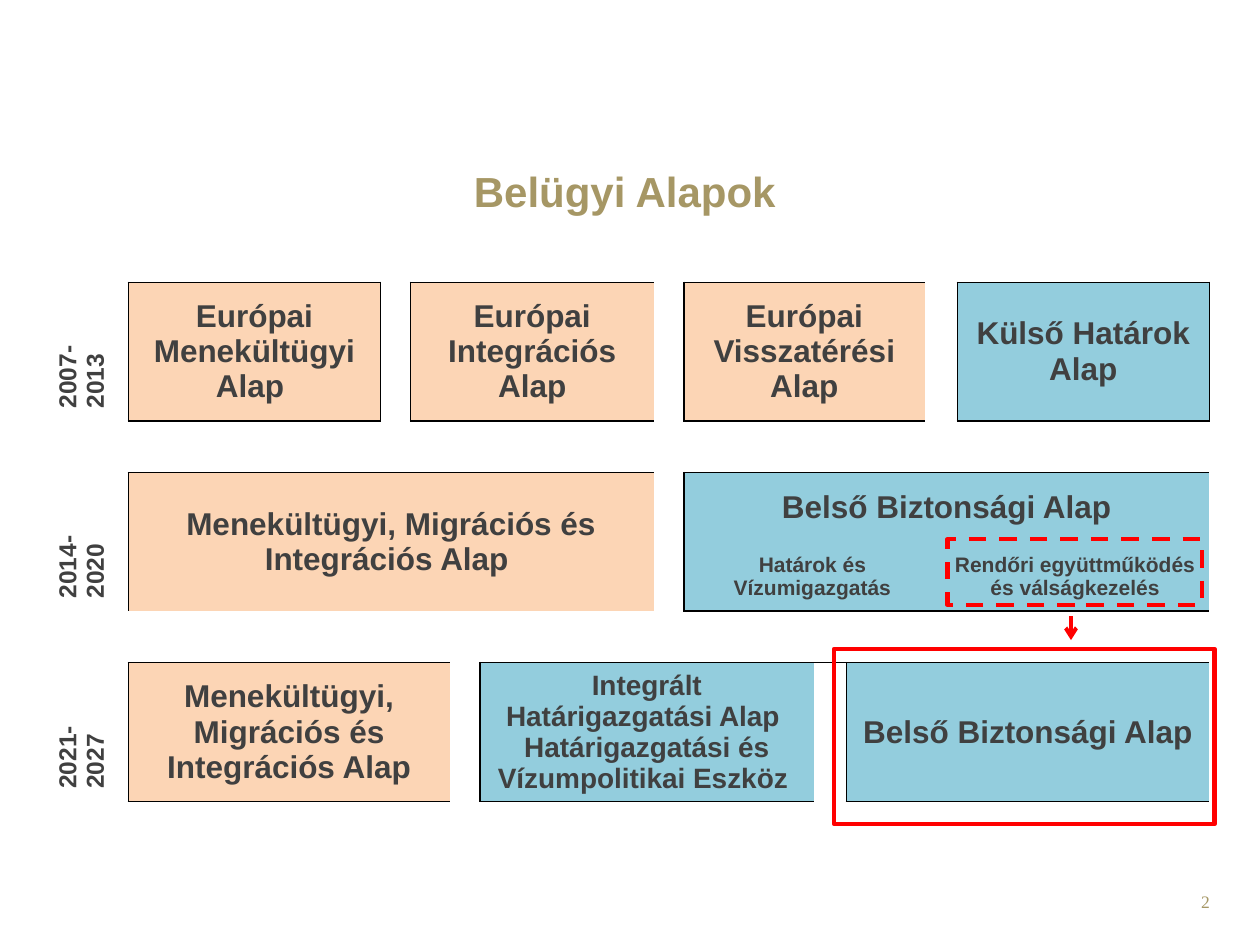
import itertools
import pptx
import pptx.util
import pptx.dml.color
import pptx.enum.dml
import pptx.enum.shapes
import pptx.enum.text
import pptx.oxml
import pptx.oxml.ns

Inches, Pt = pptx.util.Inches, pptx.util.Pt
RGB = pptx.dml.color.RGBColor.from_string
ALIGN, ANCHOR = pptx.enum.text.PP_ALIGN, pptx.enum.text.MSO_ANCHOR
NS = pptx.oxml.ns.nsdecls("a")

THEME = dict(
    font="Arial", number_font="Times New Roman",
    gold="A69765", text="404040", border="000000", accent="FF0000",
    peach="FCD5B5", blue="93CDDD",
    title=24, fund=18, fund_long=16, period=14, strand=12, number=10,
)


def style(tf, size, color, align, name=THEME["font"], bold=True):
    for p in tf.paragraphs:
        p.alignment = align
        p.font.name, p.font.size, p.font.bold = name, Pt(THEME[size]), bold
        p.font.color.rgb = RGB(THEME[color])


def add_border(tc, side, visible):
    line = f'<a:solidFill><a:srgbClr val="{THEME["border"]}"/></a:solidFill>' if visible else "<a:noFill/>"
    tc.get_or_add_tcPr().append(pptx.oxml.parse_xml(
        f'<a:ln{side} {NS} w="12700">{line}</a:ln{side}>'))


prs = pptx.Presentation()
prs.slide_width, prs.slide_height = Inches(10), Inches(7.5)
W, H = prs.slide_width, prs.slide_height
s = prs.slides.add_slide(prs.slide_layouts[5])

title = s.shapes.title
title.left, title.top, title.width, title.height = Inches(0.79), Inches(1.31), Inches(8.43), Inches(0.47)
tf = title.text_frame
tf.text = "Belügyi Alapok "
tf.margin_left = tf.margin_right = tf.margin_top = tf.margin_bottom = 0
tf.vertical_anchor = ANCHOR.TOP
style(tf, "title", "gold", ALIGN.CENTER)

cols = [0.4, 0.23, 2, 0.24, 0.31, 0.24, 1.38, 0.24, 1.03, 0.26, 0.62, 0.13, 0.13, 2]
rows = [1.1, 0.41, 0.55, 0.55, 0.41, 1.1]
frame = s.shapes.add_table(len(rows), len(cols), Inches(0.38), Inches(2.24),
                           Inches(sum(cols)), Inches(sum(rows)))
table = frame.table
table.first_row = table.horz_banding = False
table._tbl.tblPr.find(pptx.oxml.ns.qn("a:tableStyleId")).text = "{2D5ABB26-0587-4C30-8999-92F81FD0307C}"
for column, width in zip(table.columns, cols):
    column.width = Inches(width)
for row, height in zip(table.rows, rows):
    row.height = Inches(height)

gaps = [
    (0, 11, 1, 2), (1, 4, 1, 3), (1, 8, 1, 3), (1, 11, 1, 2),
    (2, 1, 2, 1), (2, 7, 2, 1),
    (4, 3, 1, 2), (4, 5, 1, 2), (4, 8, 1, 3), (4, 11, 1, 2),
]
for r, c, height, width in gaps:
    table.cell(r, c).merge(table.cell(r + height - 1, c + width - 1))

for r, span, text in [(0, 1, "2007-2013"), (2, 2, "2014-2020"), (5, 1, "2021-2027")]:
    cell = table.cell(r, 0)
    if span > 1:
        cell.merge(table.cell(r + span - 1, 0))
    cell.text = text
    cell._tc.get_or_add_tcPr().set("vert", "vert270")
    style(cell.text_frame, "period", "text", ALIGN.LEFT)

funds = [
    (0, 2, 1, 1, "Európai Menekültügyi Alap ", "fund", "peach", "LRTB"),
    (0, 4, 1, 3, "Európai Integrációs Alap", "fund", "peach", "LRTB"),
    (0, 8, 1, 3, "Európai Visszatérési Alap", "fund", "peach", "LRTB"),
    (0, 13, 1, 1, "Külső Határok Alap", "fund", "blue", "LRTB"),
    (2, 2, 2, 5, "Menekültügyi, Migrációs és Integrációs Alap ", "fund", "peach", "LRTB"),
    (2, 8, 1, 6, "Belső Biztonsági Alap", "fund", "blue", "LRT"),
    (3, 8, 1, 4, "Határok és Vízumigazgatás", "strand", "blue", "LB"),
    (3, 12, 1, 2, "Rendőri együttműködés és válságkezelés", "strand", "blue", "RB"),
    (5, 2, 1, 3, "Menekültügyi, Migrációs és Integrációs Alap", "fund", "peach", "LRTB"),
    (5, 6, 1, 3, "Integrált Határigazgatási Alap \nHatárigazgatási és Vízumpolitikai Eszköz ",
     "fund_long", "blue", "LRTB"),
    (5, 10, 1, 4, "Belső Biztonsági Alap", "fund", "blue", "LRTB"),
]
for r, c, height, width, text, size, fill, sides in funds:
    bottom, right = r + height - 1, c + width - 1
    cell = table.cell(r, c)
    if height * width > 1:
        cell.merge(table.cell(bottom, right))
    for y, x in itertools.product(range(r, bottom + 1), range(c, right + 1)):
        part = table.cell(y, x)
        on_edge = {"L": x == c, "R": x == right, "T": y == r, "B": y == bottom}
        for side, edge in on_edge.items():
            add_border(part._tc, side, edge and side in sides)
        part.fill.solid()
        part.fill.fore_color.rgb = RGB(THEME[fill])
    cell.text = text
    cell.vertical_anchor = ANCHOR.MIDDLE
    style(cell.text_frame, size, "text", ALIGN.CENTER)

for left, top, width, height, dash in [
    (6.62, 5.15, 3.02, 1.39, None),
    (7.52, 4.28, 2.02, 0.52, pptx.enum.dml.MSO_LINE.DASH),
]:
    sp = s.shapes.add_shape(pptx.enum.shapes.MSO_SHAPE.RECTANGLE,
                            Inches(left), Inches(top), Inches(width), Inches(height))
    sp.shadow.inherit = False
    sp.fill.background()
    sp.line.color.rgb = RGB(THEME["accent"])
    sp.line.width = Pt(2.5)
    if dash:
        sp.line.dash_style = dash

arrow = s.shapes.add_connector(pptx.enum.shapes.MSO_CONNECTOR.STRAIGHT,
                               int(W * 0.85), Inches(4.89), int(W * 0.85), Inches(5.08))
arrow.line.color.rgb = RGB(THEME["accent"])
arrow.line.width = Pt(2.25)
arrow.line._get_or_add_ln().append(pptx.oxml.parse_xml(f'<a:tailEnd {NS} type="arrow"/>'))
arrow._element.spPr.append(pptx.oxml.parse_xml(f'<a:effectLst {NS}/>'))

number = s.shapes.add_textbox(Inches(7.37), Inches(7.02), Inches(2.33), Inches(0.4))
number.text_frame.word_wrap = True
number.text_frame.text = "2"
style(number.text_frame, "number", "gold", ALIGN.RIGHT, THEME["number_font"], False)

prs.save("out.pptx")
